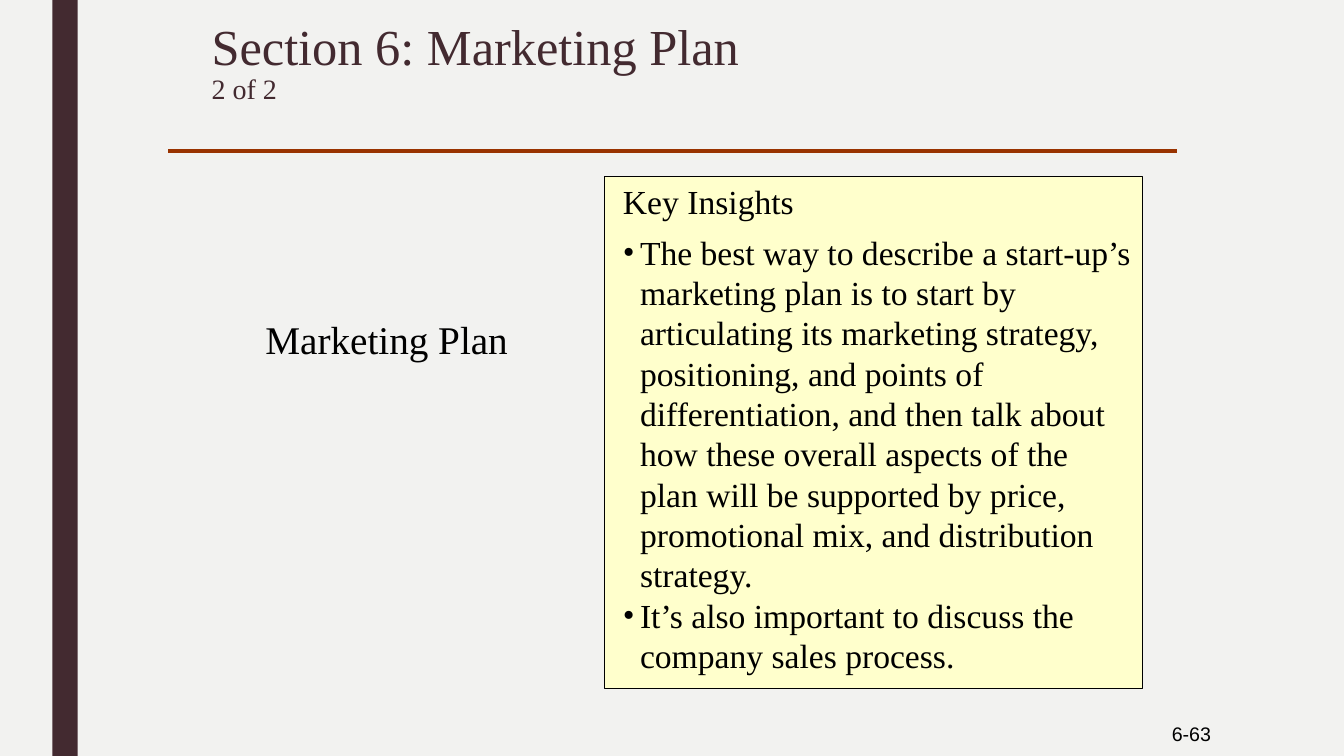
from dataclasses import dataclass
from lxml import etree
from pptx import Presentation
from pptx.dml.color import RGBColor
from pptx.enum.shapes import MSO_CONNECTOR, MSO_SHAPE
from pptx.enum.text import MSO_ANCHOR, PP_ALIGN
from pptx.oxml.ns import qn
from pptx.util import Inches, Pt

RECT = MSO_SHAPE.RECTANGLE
STRAIGHT = MSO_CONNECTOR.STRAIGHT
TOP, MIDDLE = MSO_ANCHOR.TOP, MSO_ANCHOR.MIDDLE
LEFT, CENTER, RIGHT = PP_ALIGN.LEFT, PP_ALIGN.CENTER, PP_ALIGN.RIGHT


@dataclass(frozen=True)
class Theme:
    """Colours, fonts and type sizes."""
    back: str = "F2F2F0"
    plum: str = "432A30"
    rust: str = "993300"
    cream: str = "FFFFCC"
    ink: str = "000000"
    serif: str = "Times New Roman"
    sans: str = "Arial"
    title: int = 36
    topic: int = 28
    body: int = 24
    subtitle: int = 20
    number: int = 14


THEME = Theme()
WIDTH, HEIGHT = 13.33, 7.5
INSIGHTS = [
    "The best way to describe a start-up’s\vmarketing plan is to start by\v"
    "articulating its marketing strategy,\vpositioning, and points of\v"
    "differentiation, and then talk about\vhow these overall aspects of the\v"
    "plan will be supported by price,\vpromotional mix, and distribution\v"
    "strategy.",
    "It’s also important to discuss the\vcompany sales process.",
]


def rgb(code):
    """Turn a hex code into a colour."""
    return RGBColor.from_string(code)


def add_rect(s, box, fill, line=None):
    """Add a flat rectangle."""
    sp = s.shapes.add_shape(RECT, *map(Inches, box))
    sp.shadow.inherit = False
    sp.fill.solid()
    sp.fill.fore_color.rgb = rgb(fill)
    if line:
        sp.line.color.rgb = rgb(line)
        sp.line.width = Pt(0.75)
    else:
        sp.line.fill.background()


def add_text(s, box, lines, size, color=THEME.ink, font=THEME.serif,
             align=LEFT, anchor=TOP):
    """Add a wrapped text box with one paragraph per line and return its frame."""
    tf = s.shapes.add_textbox(*map(Inches, box)).text_frame
    tf.word_wrap = True
    tf.vertical_anchor = anchor
    tf.text = "\n".join(lines)
    for p in tf.paragraphs:
        p.alignment = align
        for r in p.runs:
            r.font.size = Pt(size)
            r.font.name = font
            r.font.color.rgb = rgb(color)
    return tf


def add_bullet(p, indent):
    """Give a paragraph a hanging bullet."""
    pPr = p._p.get_or_add_pPr()
    pPr.set("marL", str(Inches(indent)))
    pPr.set("indent", str(-Inches(indent)))
    etree.SubElement(pPr, qn("a:buFont"), typeface=THEME.serif)
    etree.SubElement(pPr, qn("a:buChar"), char="•")


def add_header(s, x, y, w, h):
    """Place the title and the rule below it."""
    tf = add_text(s, (x + 0.33, y, w - 0.58, h - 0.08),
                  ["Section 6: Marketing Plan\v2 of 2"], THEME.title, THEME.plum)
    p = tf.paragraphs[0]
    p.line_spacing = 0.89
    p.runs[-1].font.size = Pt(THEME.subtitle)
    rule = s.shapes.add_connector(
        STRAIGHT, *map(Inches, (x, y + h, x + w, y + h)))
    rule.line.color.rgb = rgb(THEME.rust)
    rule.line.width = Pt(3)
    etree.SubElement(rule._element.spPr, qn("a:effectLst"))


def add_insights(s, x, y, w, h):
    """Place the panel with its heading and bullets."""
    add_rect(s, (x, y, w, h), THEME.cream, THEME.ink)
    add_text(s, (x + 0.08, y, w - 0.25, 0.5), ["Key Insights"], THEME.body)
    tf = add_text(s, (x + 0.08, y + 0.5, w, h - 0.54), INSIGHTS, THEME.body)
    for p in tf.paragraphs:
        add_bullet(p, 0.17)


def build_slide(prs):
    """Build the marketing plan slide."""
    s = prs.slides.add_slide(prs.slide_layouts[6])
    s.background.fill.solid()
    s.background.fill.fore_color.rgb = rgb(THEME.back)
    add_rect(s, (0.52, 0, 0.25, HEIGHT), THEME.plum)
    add_header(s, 1.67, 0.17, 10, 1.33)
    add_text(s, (1.67, 3.08, 4.33, 0.57), ["Marketing Plan"], THEME.topic,
             align=CENTER)
    add_insights(s, 6, 1.75, 5.33, 5.08)
    add_text(s, (10.36, HEIGHT - 0.44, 1.75, 0.44), ["6-63"], THEME.number,
             font=THEME.sans, align=RIGHT, anchor=MIDDLE)


def main():
    """Create and save the presentation."""
    prs = Presentation()
    prs.slide_width, prs.slide_height = Inches(WIDTH), Inches(HEIGHT)
    build_slide(prs)
    prs.save("out.pptx")


if __name__ == "__main__":
    main()
